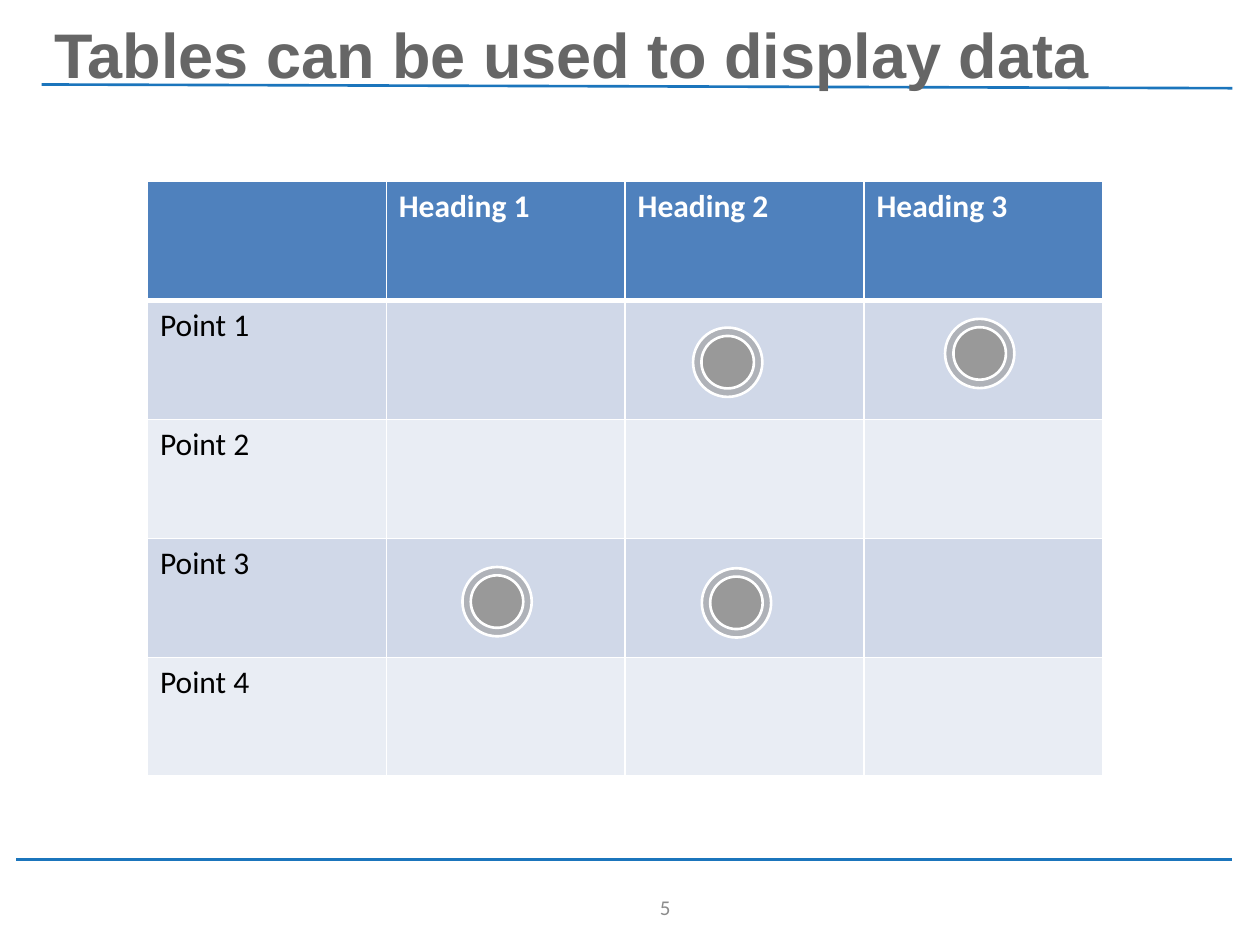
from lxml import etree
from pptx import Presentation
from pptx.dml.color import RGBColor
from pptx.enum.shapes import MSO_CONNECTOR, MSO_SHAPE
from pptx.enum.text import MSO_ANCHOR, PP_ALIGN
from pptx.oxml import parse_xml
from pptx.oxml.ns import nsdecls, qn
from pptx.util import Pt

COLORS = {
    "rule": "1B75BC", "title": "666666", "number": "8C8C8C",
    "header": "4F81BD", "odd": "D0D8E8", "even": "E9EDF4",
    "white": "FFFFFF", "black": "000000", "marker": "999999",
}
ROWS = [
    ["", "Heading 1", "Heading 2", "Heading 3"],
    ["Point 1", "", "", ""],
    ["Point 2", "", "", ""],
    ["Point 3", "", "", ""],
    ["Point 4", "", "", ""],
]
# Top left corners of the markers, relative to the table
MARKERS = [(455.8, 78.5), (316.8, 221), (311.8, 83.5), (180, 220.3)]


def rgb(name):
    return RGBColor.from_string(COLORS[name])


def add_run(p, text, size, color, font, bold=False):
    r = p.add_run()
    r.text = text
    r.font.size = Pt(size)
    r.font.name = font
    r.font.bold = bold
    r.font.color.rgb = rgb(color)


def add_rule(s, x1, y1, x2, y2):
    line = s.shapes.add_connector(
        MSO_CONNECTOR.STRAIGHT, Pt(x1), Pt(y1), Pt(x2), Pt(y2))
    line.line.color.rgb = rgb("rule")
    line.line.width = Pt(1.5)
    etree.SubElement(line._element.spPr, qn("a:effectLst"))


def add_title(s, x, y, w, h):
    add_rule(s, x, y + 49.7, x + 680.4, y + 51.8)
    tf = s.shapes.add_textbox(Pt(x), Pt(y), Pt(w), Pt(h)).text_frame
    tf.word_wrap = True
    tf.margin_left = tf.margin_right = Pt(7.2)
    tf.margin_top, tf.margin_bottom = Pt(10.5), Pt(0)
    add_run(tf.paragraphs[0], "Tables can be used to display data",
            36, "title", "Arial", bold=True)


def add_footer(s, x, y, w, h):
    add_rule(s, x, y, x + w, y)
    tf = s.shapes.add_textbox(
        Pt(x + 332.6), Pt(y + 13), Pt(48.2), Pt(h - 13)).text_frame
    tf.word_wrap = True
    tf.vertical_anchor = MSO_ANCHOR.MIDDLE
    p = tf.paragraphs[0]
    p.alignment = PP_ALIGN.RIGHT
    add_run(p, "5", 12, "number", "Calibri")


def set_borders(cell, top, bottom):
    tc_pr = cell._tc.get_or_add_tcPr()
    widths = {"lnL": 1, "lnR": 1, "lnT": top, "lnB": bottom}
    for i, (tag, width) in enumerate(widths.items()):
        tc_pr.insert(i, parse_xml(
            f'<a:{tag} {nsdecls("a")} w="{Pt(width)}"><a:solidFill>'
            f'<a:srgbClr val="{COLORS["white"]}"/></a:solidFill></a:{tag}>'))


def add_data_table(s, x, y, w, h):
    n_rows, n_cols = len(ROWS), len(ROWS[0])
    table = s.shapes.add_table(
        n_rows, n_cols, Pt(x), Pt(y), Pt(w), Pt(h)).table
    for col in table.columns:
        col.width = Pt(w / n_cols)
    for i, row in enumerate(ROWS):
        table.rows[i].height = Pt(h / n_rows)
        header = i == 0
        fill = "header" if header else "odd" if i % 2 else "even"
        for j, text in enumerate(row):
            cell = table.cell(i, j)
            cell.fill.solid()
            cell.fill.fore_color.rgb = rgb(fill)
            set_borders(cell, 3 if i == 1 else 1, 3 if header else 1)
            if text:
                add_run(cell.text_frame.paragraphs[0], text, 18,
                        "white" if header else "black", "Calibri", header)


def add_marker(s, x, y, size):
    """Translucent ring with a solid disc centred in it."""
    group = s.shapes.add_group_shape()
    for inset, alpha in ((0, 60), (4.8, 100)):
        d = size - 2 * inset
        sp = group.shapes.add_shape(
            MSO_SHAPE.OVAL, Pt(x + inset), Pt(y + inset), Pt(d), Pt(d))
        sp.shadow.inherit = False
        sp.fill.solid()
        sp.fill.fore_color.rgb = rgb("marker")
        sp.line.color.rgb = rgb("white")
        sp.line.width = Pt(1.5)
        if alpha < 100:
            color = sp._element.spPr.find(qn("a:solidFill"))[0]
            etree.SubElement(color, qn("a:alpha"), val=str(alpha * 1000))


def main():
    prs = Presentation()
    prs.slide_width, prs.slide_height = Pt(720), Pt(540)
    s = prs.slides.add_slide(prs.slide_layouts[6])

    # Title and footer with their rules
    add_title(s, 23.8, -1.4, 656, 50.4)
    add_footer(s, 9.4, 491, 694.8, 41.8)

    # Table with markers on top
    left, top = 84.24, 103.7
    add_data_table(s, left, top, 546, 340)
    for dx, dy in MARKERS:
        add_marker(s, left + dx, top + dy, 39.6)

    prs.save("out.pptx")


if __name__ == "__main__":
    main()
